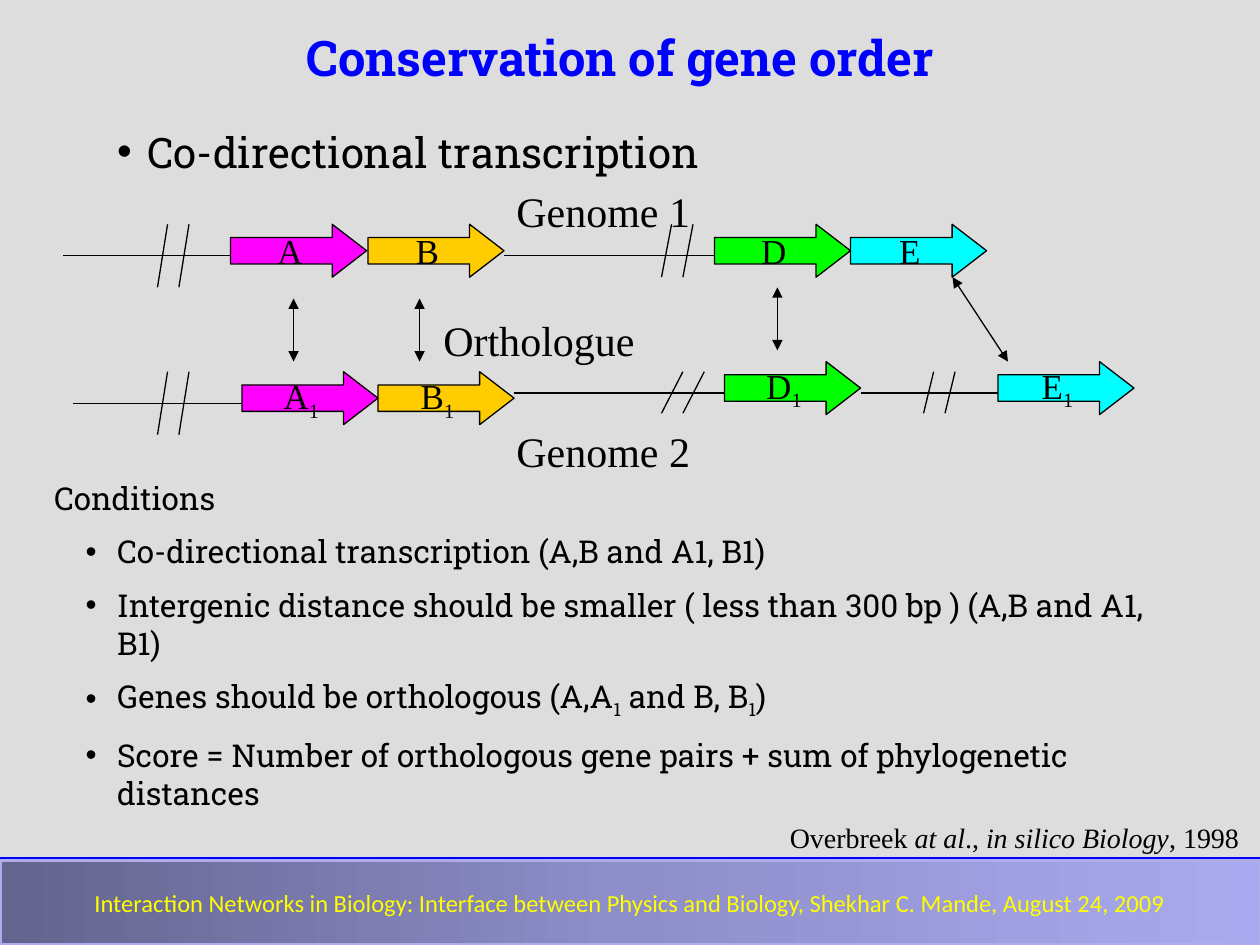
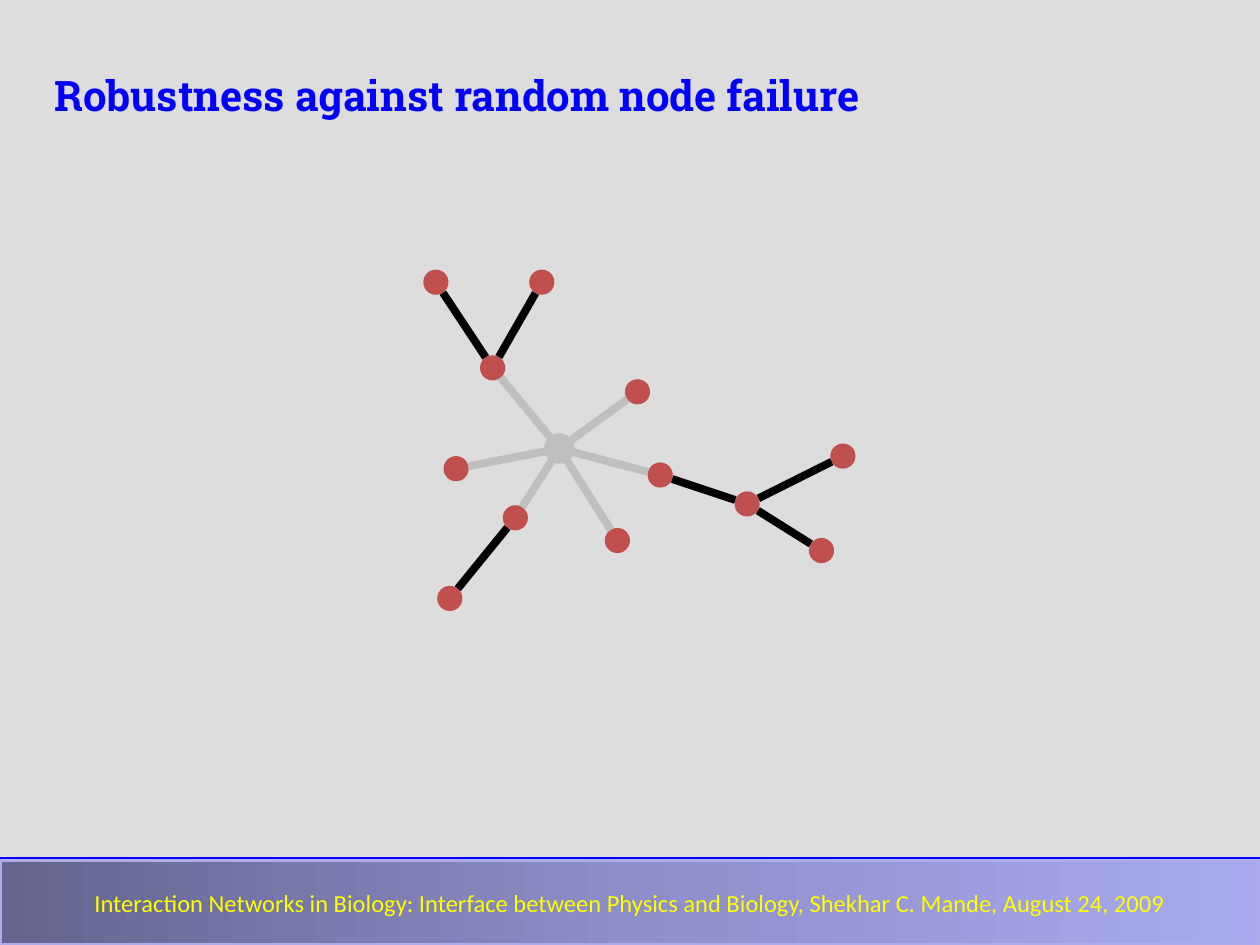
"""Build two slides on gene order conservation and network robustness."""
from copy import deepcopy
from dataclasses import dataclass
from math import hypot

from lxml import etree
from pptx import Presentation
from pptx.dml.color import RGBColor
from pptx.enum.shapes import MSO_CONNECTOR, MSO_SHAPE
from pptx.enum.text import MSO_ANCHOR, MSO_AUTO_SIZE, PP_ALIGN
from pptx.oxml.ns import qn
from pptx.util import Inches, Pt

STRAIGHT = MSO_CONNECTOR.STRAIGHT
ARROW, OVAL, RECTANGLE = MSO_SHAPE.RIGHT_ARROW, MSO_SHAPE.OVAL, MSO_SHAPE.RECTANGLE
LEFT, CENTER = PP_ALIGN.LEFT, PP_ALIGN.CENTER
TOP, MIDDLE = MSO_ANCHOR.TOP, MSO_ANCHOR.MIDDLE
NO_FIT = MSO_AUTO_SIZE.NONE


@dataclass(frozen=True)
class Theme:
    """Colours, fonts and type sizes of the deck."""
    background: str = "DDDDDD"
    title: str = "0000FF"
    ink: str = "000000"
    band: tuple = ((0, "64648E"), (0.5, "8E8ECA"), (1, "A9A9EF"))
    band_edge: str = "ADADEB"
    footer: str = "FFFF00"
    node: str = "C0504D"
    failed: str = "BFBFBF"
    slab: str = "Roboto Slab"
    serif: str = "Times New Roman"
    sans: str = "Calibri"
    title_size: int = 28
    large: int = 24
    gene: int = 20
    body: int = 18
    citation: int = 16
    small: int = 14


THEME = Theme()
WIDTH, HEIGHT, BAND_TOP = 10, 7.5, 6.83

FOOTER = ("Interaction Networks in Biology: Interface between Physics and Biology, "
          "Shekhar C. Mande, August 24, 2009")
ORDER_TITLE = "Conservation of gene order"
ROBUSTNESS_TITLE = "Robustness against random node failure"
TOPIC = "Co-directional transcription"
CONDITIONS = [
    "Conditions",
    "Co-directional transcription (A,B and A1, B1)",
    "Intergenic distance should be smaller ( less than 300 bp ) (A,B and A1, B1)",
    [("Genes should be orthologous (A,A", ""), ("1", "sub"), (" and B, B", ""),
     ("1", "sub"), (")", "")],
    "Score = Number of orthologous gene pairs + sum of phylogenetic distances",
]
CITATION = [("Overbreek ", ""), ("at al", "italic"), ("., ", ""),
            ("in silico Biology", "italic"), (", 1998", "")]
LABELS = [("Genome 1", 4, 1.42, 1.83), ("Genome 2", 4, 3.33, 1.83),
          ("Orthologue", 3.42, 2.45, 2.83)]

GENE_COLORS = {"A": "FF00FF", "B": "FFCC00", "D": "00FF00", "E": "00FFFF"}
GENE_SIZE = (1.08, 0.42)
GENES = [("A", "", 1.83, 1.78), ("B", "", 2.92, 1.78),
         ("D", "", 5.67, 1.78), ("E", "", 6.75, 1.78),
         ("A", "1", 1.92, 2.95), ("B", "1", 3, 2.95),
         ("D", "1", 5.75, 2.87), ("E", "1", 7.92, 2.87)]
STRANDS = [(0.5, 1.83, 2.03), (4, 5.67, 2.03),
           (0.58, 1.92, 3.2), (4.08, 5.75, 3.12), (6.83, 7.92, 3.12)]
BREAKS = [(1.25, 1.78, 0.08, 0.5), (5.25, 1.78, 0.08, 0.42),
          (1.25, 2.95, 0.08, 0.5), (5.25, 2.95, 0.17, 0.33),
          (7.33, 2.95, 0.08, 0.33)]
BREAK_GAP = 0.17
ORTHOLOGUES = [((2.33, 2.37), (2.33, 2.87)), ((3.33, 2.37), (3.33, 2.87)),
               ((6.17, 2.28), (6.17, 2.78)), ((7.56, 2.2), (8, 2.87))]

NODE_RADIUS = 0.1
HUB = "hub"
NODES = {
    "north": (3.91, 2.92), HUB: (4.44, 3.56), "south": (4.09, 4.11),
    "southeast": (4.9, 4.29), "northeast": (5.06, 3.11), "east": (5.24, 3.77),
    "west": (3.62, 3.72), "fork": (5.93, 4), "fork low": (6.52, 4.37),
    "fork high": (6.69, 3.62), "south leaf": (3.57, 4.75),
    "north left": (3.46, 2.24), "north right": (4.3, 2.24),
}
EDGES = [("north left", "north"), ("north", HUB), (HUB, "southeast"),
         ("fork", "fork low"), ("east", "fork"), (HUB, "northeast"),
         ("west", HUB), ("south", HUB), (HUB, "east"), ("fork", "fork high"),
         ("north", "north right"), ("south leaf", "south")]


def color(value):
    """Turn a hex string into a colour."""
    return RGBColor.from_string(value)


def place(shape, left, top, width, height):
    """Move and size a shape, in inches."""
    shape.left, shape.top = Inches(left), Inches(top)
    shape.width, shape.height = Inches(width), Inches(height)


def set_bullet(paragraph, margin, hanging):
    """Set a round bullet with a hanging indent, or none when margin is zero."""
    properties = paragraph._p.get_or_add_pPr()
    properties.set("marL", str(Inches(margin)))
    properties.set("indent", str(-Inches(hanging)))
    if margin:
        font = etree.SubElement(properties, qn("a:buFont"))
        font.set("typeface", "Arial")
        etree.SubElement(properties, qn("a:buChar")).set("char", "•")
    else:
        etree.SubElement(properties, qn("a:buNone"))


def write(shape, paragraphs, size=THEME.body, font=THEME.slab, ink=THEME.ink,
          bold=False, align=LEFT, anchor=TOP, wrap=True, bullets=None):
    """Fill a shape with paragraphs, each a string or a list of (text, style)."""
    frame = shape.text_frame
    frame.auto_size, frame.word_wrap, frame.vertical_anchor = NO_FIT, wrap, anchor
    for index, content in enumerate(paragraphs):
        paragraph = frame.add_paragraph() if index else frame.paragraphs[0]
        paragraph.alignment = align
        paragraph.space_before = Pt(size / 2 if index else 0)
        set_bullet(paragraph, *(bullets[index] if bullets else (0, 0)))
        runs = [(content, "")] if isinstance(content, str) else content
        for text, style in runs:
            run = paragraph.add_run()
            run.text = text
            run.font.name, run.font.size, run.font.bold = font, Pt(size), bold
            run.font.color.rgb = color(ink)
            if style == "italic":
                run.font.italic = True
            if style == "sub":
                run.font._element.set("baseline", "-25000")


def add_text(slide, box, paragraphs, **style):
    """Add a text box."""
    shape = slide.shapes.add_textbox(*map(Inches, box))
    write(shape, paragraphs, **style)


def add_shape(slide, kind, box, fill=None, line=None, weight=0.75):
    """Add a preset shape without shadow."""
    shape = slide.shapes.add_shape(kind, *map(Inches, box))
    shape.shadow.inherit = False
    if fill:
        shape.fill.solid()
        shape.fill.fore_color.rgb = color(fill)
    if line:
        shape.line.color.rgb = color(line)
        shape.line.width = Pt(weight)
    else:
        shape.line.fill.background()
    return shape


def add_line(slide, start, end, ink=THEME.ink, weight=0.75, arrows=False):
    """Add a straight line, with arrowheads at both ends on request."""
    line = slide.shapes.add_connector(STRAIGHT, *map(Inches, (*start, *end)))
    line.line.color.rgb = color(ink)
    line.line.width = Pt(weight)
    if arrows:
        for end_name in ("a:headEnd", "a:tailEnd"):
            etree.SubElement(line.line._get_or_add_ln(), qn(end_name)).set("type", "triangle")
    etree.SubElement(line.element.spPr, qn("a:effectLst"))
    return line


def add_title(slide, text, box, **style):
    """Place the title in its placeholder."""
    place(slide.shapes.title, *box)
    write(slide.shapes.title, [text], ink=THEME.title, bold=True, **style)


def build_master(master, slide):
    """Set the background and move the footer band to the slide master."""
    master.background.fill.solid()
    master.background.fill.fore_color.rgb = color(THEME.background)
    rule = add_line(slide, (0, BAND_TOP), (WIDTH, BAND_TOP), THEME.title, 4.5)
    band = add_shape(slide, RECTANGLE, (0, BAND_TOP, WIDTH, HEIGHT - BAND_TOP),
                     line=THEME.band_edge, weight=2)
    band.fill.gradient()
    band.fill.gradient_angle = 0
    stop_list = band.element.spPr.find(".//" + qn("a:gsLst"))
    stop_list.append(deepcopy(stop_list[0]))
    for stop, (position, value) in zip(band.fill.gradient_stops, THEME.band):
        stop.position, stop.color.rgb = position, color(value)
    write(band, [FOOTER], size=THEME.small, font=THEME.sans, ink=THEME.footer,
          align=CENTER, anchor=MIDDLE)
    for shape in (rule, band):
        master.shapes.element.append(shape.element)


def build_gene_order(slide):
    """Draw two genomes with their orthologous genes and the conditions."""
    add_title(slide, ORDER_TITLE, (0.42, 0.17, 9, 1.25), size=THEME.title_size, align=CENTER)
    topic, conditions = slide.placeholders[1], slide.placeholders[2]
    place(topic, 0.83, 0.95, 6, 0.51)
    write(topic, [TOPIC], size=THEME.large, bullets=[(0.24, 0.24)])
    place(conditions, 0.33, 3.75, 9.25, 3.28)
    write(conditions, CONDITIONS,
          bullets=[(0, 0)] + [(0.5, 0.25)] * (len(CONDITIONS) - 1))
    for name, suffix, left, top in GENES:
        gene = add_shape(slide, ARROW, (left, top, *GENE_SIZE), GENE_COLORS[name], THEME.ink)
        gene.adjustments[0], gene.adjustments[1] = 0.5, 0.65
        runs = [(name, "")] + ([(suffix, "sub")] if suffix else [])
        write(gene, [runs], size=THEME.gene, font=THEME.serif, align=CENTER,
              anchor=MIDDLE, wrap=False)
    for left, right, level in STRANDS:
        add_line(slide, (left, level), (right, level))
    for left, top, slant, height in BREAKS:
        for x in (left, left + BREAK_GAP):
            add_line(slide, (x + slant, top), (x, top + height))
    for upper, lower in ORTHOLOGUES:
        add_line(slide, upper, lower, arrows=True)
    for text, left, top, width in LABELS:
        add_text(slide, (left, top, width, 0.4), [text], size=THEME.large, font=THEME.serif)
    add_text(slide, (6.17, 6.46, 3.83, 0.37), [CITATION], size=THEME.citation, font=THEME.serif)


def build_robustness(slide):
    """Draw a network whose hub has failed."""
    add_title(slide, ROBUSTNESS_TITLE, (0.33, 0.5, 7.24, 0.51), size=THEME.large, wrap=False)
    for name, (x, y) in NODES.items():
        box = (x - NODE_RADIUS, y - NODE_RADIUS, 2 * NODE_RADIUS, 2 * NODE_RADIUS)
        if name == HUB:
            add_shape(slide, OVAL, box, THEME.failed, THEME.failed, 3)
        else:
            add_shape(slide, OVAL, box, THEME.node)
    for edge in EDGES:
        (x1, y1), (x2, y2) = (NODES[name] for name in edge)
        share = NODE_RADIUS / hypot(x2 - x1, y2 - y1)
        dx, dy = (x2 - x1) * share, (y2 - y1) * share
        ink = THEME.failed if HUB in edge else THEME.ink
        add_line(slide, (x1 + dx, y1 + dy), (x2 - dx, y2 - dy), ink, 4.5)


def main():
    """Build and save the presentation."""
    presentation = Presentation()
    presentation.slide_width, presentation.slide_height = Inches(WIDTH), Inches(HEIGHT)
    two_content = presentation.slide_layouts.get_by_name("Two Content")
    title_only = presentation.slide_layouts.get_by_name("Title Only")
    gene_order = presentation.slides.add_slide(two_content)
    build_gene_order(gene_order)
    build_master(presentation.slide_master, gene_order)
    build_robustness(presentation.slides.add_slide(title_only))
    presentation.save("out.pptx")


if __name__ == "__main__":
    main()
